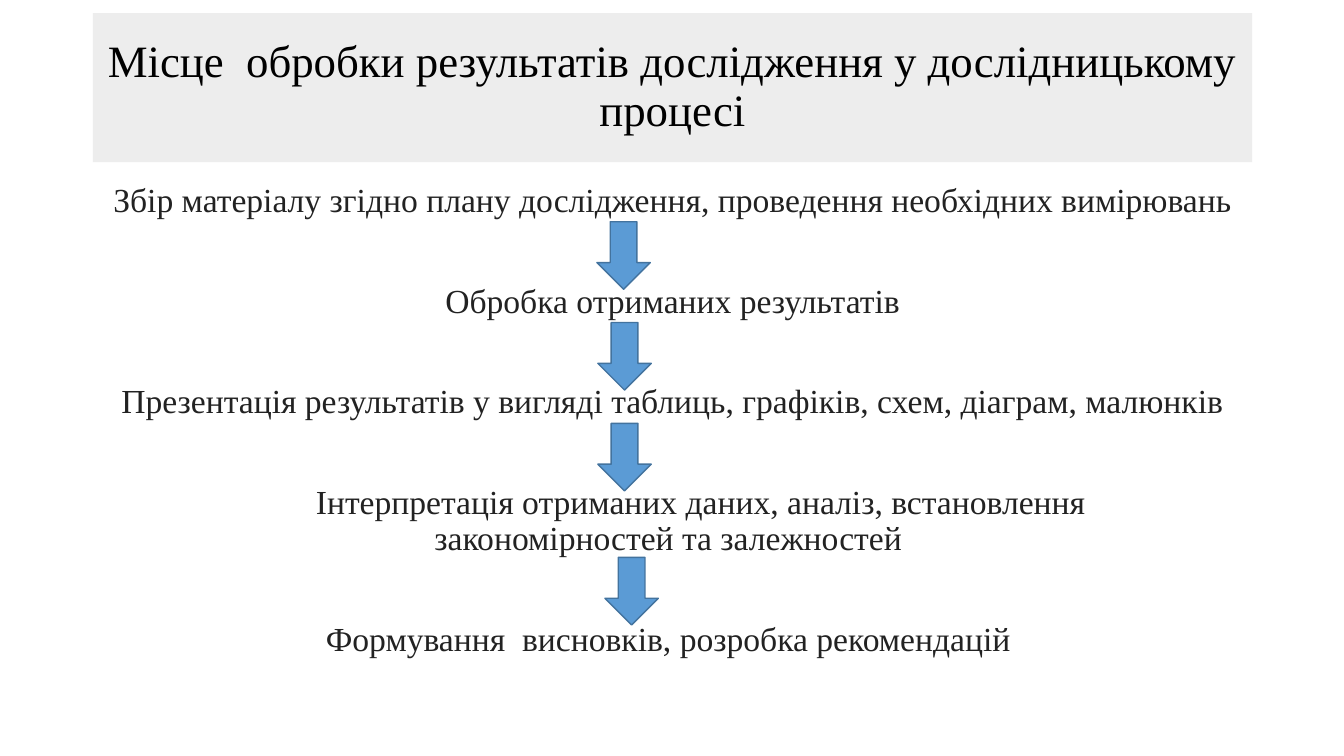
from pptx import Presentation
from pptx.dml.color import RGBColor
from pptx.enum import shapes, text
from pptx.util import Inches, Pt

HEADING = "Місце  обробки результатів дослідження у дослідницькому процесі"
STAGES = [
    "Збір матеріалу згідно плану дослідження, проведення необхідних вимірювань",
    "Обробка отриманих результатів",
    "Презентація результатів у вигляді таблиць, графіків, схем, діаграм, малюнків",
    "Інтерпретація отриманих даних, аналіз, встановлення\vзакономірностей та залежностей ",
    "Формування  висновків, розробка рекомендацій ",
]
ARROW_LEFTS = [5.92, 5.93, 5.93, 6]
COLORS = {"band": "EDEDED", "heading": "000000", "stage": "222222",
          "arrow": "5B9BD5", "outline": "43739E"}
FONT = "Times New Roman"
LEFT, WIDTH = 0.92, 11.5
FIRST_ARROW, STAGE_STEP, EXTRA_LINE = 2.2, 1, 0.33
ARROW_WIDTH, ARROW_HEIGHT = 0.53, 0.67


def color(name):
    return RGBColor.from_string(COLORS[name])


def place(shape, left, top, width, height):
    shape.left, shape.top = Inches(left), Inches(top)
    shape.width, shape.height = Inches(width), Inches(height)


def write(paragraph, words, size, ink, before=0, first_indent=0):
    paragraph.text = words
    paragraph.alignment = text.PP_ALIGN.CENTER
    paragraph.line_spacing = 0.9
    paragraph.space_before = Pt(before)
    if first_indent:
        properties = paragraph._p.get_or_add_pPr()
        properties.set("marL", "0")
        properties.set("indent", str(Inches(first_indent)))
    for run in paragraph.runs:
        run.font.name = FONT
        run.font.size = Pt(size)
        run.font.color.rgb = color(ink)


def main():
    deck = Presentation()
    deck.slide_width, deck.slide_height = Inches(13.33), Inches(7.5)
    slide = deck.slides.add_slide(deck.slide_layouts[5])

    heading = slide.shapes.title
    place(heading, LEFT, 0.13, WIDTH, 1.48)
    heading.fill.solid()
    heading.fill.fore_color.rgb = color("band")
    heading.text_frame.auto_size = text.MSO_AUTO_SIZE.NONE
    heading.text_frame.vertical_anchor = text.MSO_ANCHOR.MIDDLE
    write(heading.text_frame.paragraphs[0], HEADING, 32, "heading")

    process = slide.shapes.add_textbox(Inches(LEFT), Inches(1.77), Inches(WIDTH), Inches(4.98))
    process.text_frame.word_wrap = True
    for index, stage in enumerate(STAGES):
        paragraph = process.text_frame.add_paragraph() if index else process.text_frame.paragraphs[0]
        write(paragraph, stage, 24, "stage", before=46 if index else 10,
              first_indent=0.56 if "\v" in stage else 0)

    top = FIRST_ARROW
    for left, stage in zip(ARROW_LEFTS, STAGES):
        top += EXTRA_LINE * stage.count("\v")
        arrow = slide.shapes.add_shape(shapes.MSO_SHAPE.DOWN_ARROW, Inches(left), Inches(top),
                                       Inches(ARROW_WIDTH), Inches(ARROW_HEIGHT))
        arrow.shadow.inherit = False
        arrow.fill.solid()
        arrow.fill.fore_color.rgb = color("arrow")
        arrow.line.color.rgb = color("outline")
        arrow.line.width = Pt(1)
        top += STAGE_STEP

    deck.save("out.pptx")


if __name__ == "__main__":
    main()
